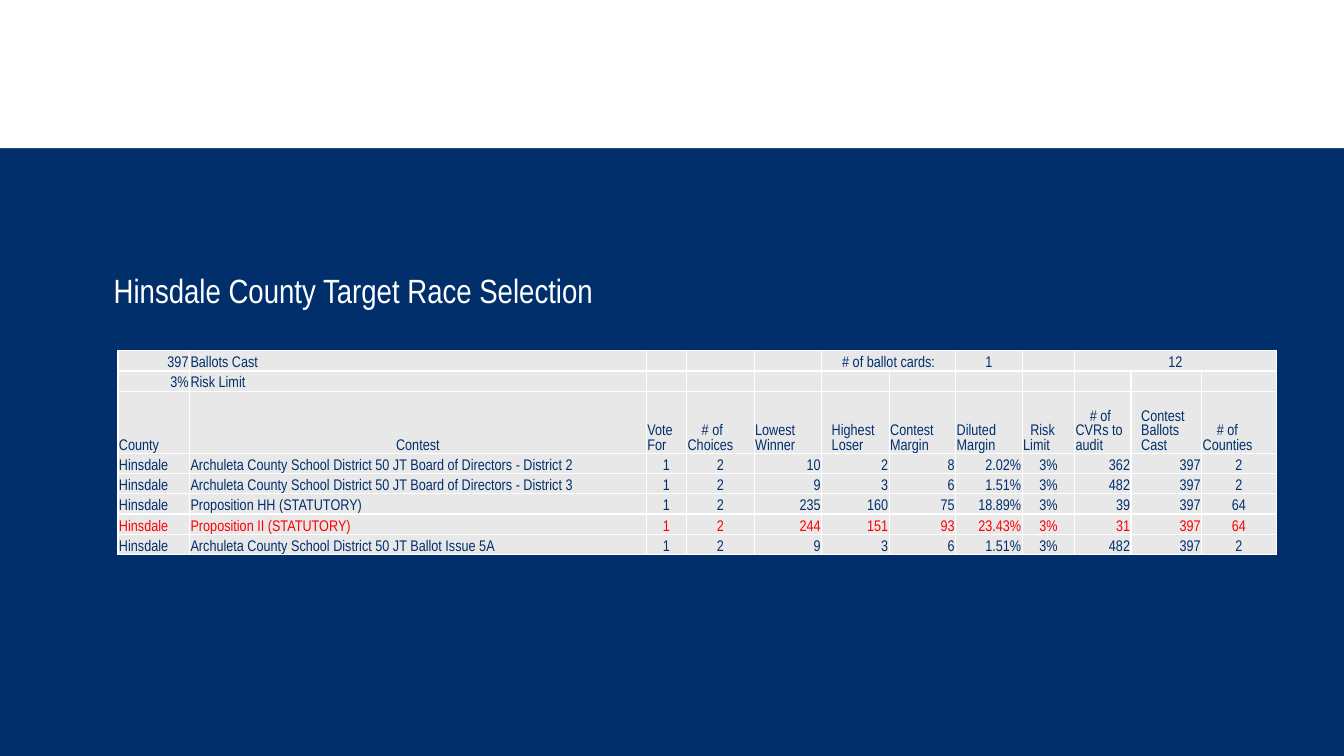
from lxml.etree import SubElement
from pptx import Presentation
from pptx.dml.color import RGBColor
from pptx.enum.shapes import MSO_SHAPE as Shape
from pptx.enum.text import MSO_ANCHOR as Anchor, PP_ALIGN as Align
from pptx.oxml.ns import qn
from pptx.util import Inches, Pt

NAVY = RGBColor(0x00, 0x2F, 0x6C)
WHITE = RGBColor(0xFF, 0xFF, 0xFF)
PALE = RGBColor(0xE9, 0xE8, 0xE9)
RED = RGBColor(0xFF, 0x00, 0x00)
FONT = "Arial Narrow"

COLUMN_WIDTHS = [0.71, 4.53, 0.4, 0.67, 0.67, 0.67, 0.66, 0.66, 0.52, 0.56, 0.7, 0.74]
ROW_HEIGHTS = [0.2, 0.2, 0.62] + [0.2] * 5
HEADER_ROW, TARGET_ROW = 2, 6
HEADER_INDENTS = {3: 0.14, 8: 0.07, 9: 0.14, 11: 0.14}
HEADER_INSETS = {5: 0.1, 10: 0.1}
ALIGNMENTS = {"l": Align.LEFT, "c": Align.CENTER, "r": Align.RIGHT}
SUMMARY_ALIGN = "rlcccccccccc"
HEADER_ALIGN = "lcllllllllll"
CONTEST_ALIGN = "llccrrrrcrrc"
DISTRICT = "Archuleta County School District 50 JT"

RACES = [
    ["397", "Ballots Cast", "", "", "", "# of ballot cards:", "", "1", "", "12", "", ""],
    ["3%", "Risk Limit"] + [""] * 10,
    ["County", "Contest", "Vote For", "# of Choices", "Lowest Winner", "Highest Loser",
     "Contest Margin", "Diluted Margin", "Risk Limit", "# of CVRs to audit",
     "Contest Ballots Cast", "# of Counties"],
]
for contest, winner, loser, margin, diluted, audits, counties in [
    (f"{DISTRICT} Board of Directors - District 2", "10", "2", "8", "2.02%", "362", "2"),
    (f"{DISTRICT} Board of Directors - District 3", "9", "3", "6", "1.51%", "482", "2"),
    ("Proposition HH (STATUTORY)", "235", "160", "75", "18.89%", "39", "64"),
    ("Proposition II (STATUTORY)", "244", "151", "93", "23.43%", "31", "64"),
    (f"{DISTRICT} Ballot Issue 5A", "9", "3", "6", "1.51%", "482", "2"),
]:
    RACES.append(["Hinsdale", contest, "1", "2", winner, loser, margin, diluted,
                  "3%", audits, "397", counties])


def apply_format(target, values):
    for name, value in values.items():
        setattr(target, name, value)


def write(paragraph, text, size, color):
    run = paragraph.add_run()
    run.text = text
    apply_format(run.font, {"size": Pt(size), "name": FONT})
    run.font.color.rgb = color


def add_band(slide, left, top, width, height):
    band = slide.shapes.add_shape(Shape.RECTANGLE, Inches(left), Inches(top),
                                  Inches(width), Inches(height))
    band.shadow.inherit = False
    band.fill.solid()
    band.fill.fore_color.rgb = WHITE
    band.line.fill.background()


def add_title(slide, left, top, width, height):
    title = slide.shapes.add_textbox(Inches(left), Inches(top), Inches(width), Inches(height))
    title.text_frame.word_wrap = True
    write(title.text_frame.paragraphs[0], "Hinsdale County Target Race Selection", 24, WHITE)


def add_borders(cell):
    properties = cell._tc.get_or_add_tcPr()
    for position, side in enumerate(("a:lnL", "a:lnR", "a:lnT", "a:lnB")):
        border = SubElement(properties, qn(side), w=str(Pt(1)))
        fill = SubElement(border, qn("a:solidFill"))
        SubElement(fill, qn("a:srgbClr"), val=str(WHITE))
        properties.remove(border)
        properties.insert(position, border)


def fill_cell(cell, text, row, column):
    apply_format(cell, {"margin_left": Inches(0.01), "margin_right": Inches(0.01),
                        "margin_top": Inches(0.01), "margin_bottom": 0,
                        "vertical_anchor": Anchor.BOTTOM})
    cell.fill.solid()
    cell.fill.fore_color.rgb = PALE
    add_borders(cell)
    paragraph = cell.text_frame.paragraphs[0]
    if not text:
        SubElement(paragraph._p, qn("a:endParaRPr"), sz="1100")
        return
    aligns = (SUMMARY_ALIGN if row < HEADER_ROW
              else HEADER_ALIGN if row == HEADER_ROW else CONTEST_ALIGN)
    paragraph.alignment = ALIGNMENTS[aligns[column]]
    if row == HEADER_ROW:
        cell.margin_left = Inches(HEADER_INSETS.get(column, 0.01))
        indent = Inches(HEADER_INDENTS.get(column, 0))
        paragraph._p.get_or_add_pPr().set("indent", str(indent))
    write(paragraph, text, 11, RED if row == TARGET_ROW else NAVY)


def add_race_table(slide, left, top):
    races = slide.shapes.add_table(
        len(ROW_HEIGHTS), len(COLUMN_WIDTHS), Inches(left), Inches(top),
        Inches(sum(COLUMN_WIDTHS)), Inches(sum(ROW_HEIGHTS))).table
    apply_format(races, {"first_row": False, "horz_banding": False})
    for column, width in zip(races.columns, COLUMN_WIDTHS):
        column.width = Inches(width)
    for row, height in zip(races.rows, ROW_HEIGHTS):
        row.height = Inches(height)
    for row, texts in enumerate(RACES):
        for column, text in enumerate(texts):
            fill_cell(races.cell(row, column), text, row, column)
    for first, last in ((5, 6), (9, 11)):
        races.cell(0, first).merge(races.cell(0, last))


def main():
    presentation = Presentation()
    apply_format(presentation, {"slide_width": Inches(13.33), "slide_height": Inches(7.5)})
    slide = presentation.slides.add_slide(presentation.slide_layouts[6])
    slide.background.fill.solid()
    slide.background.fill.fore_color.rgb = NAVY
    add_band(slide, 0, 0, 13.33, 1.47)
    add_race_table(slide, 1.17, 3.48)
    add_title(slide, 1.03, 2.63, 6.4, 0.5)
    presentation.save("out.pptx")


if __name__ == "__main__":
    main()
